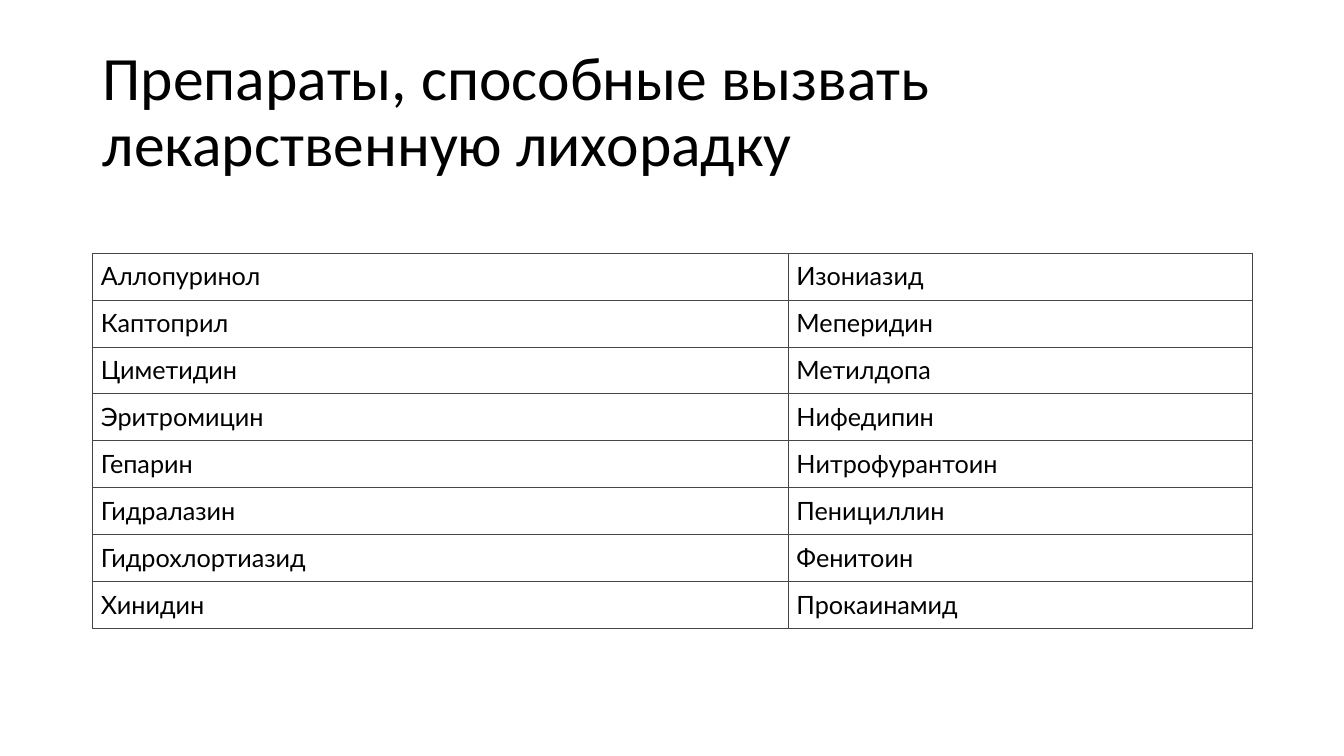
from dataclasses import dataclass

from lxml.etree import SubElement as Sub
from pptx import Presentation
from pptx.dml.color import RGBColor as Rgb
from pptx.enum.text import MSO_ANCHOR as Anchor
from pptx.oxml.ns import qn
from pptx.slide import Slide
from pptx.table import _Cell as Cell
from pptx.text.text import _Paragraph as Para
from pptx.util import Inches, Pt


@dataclass(frozen=True)
class Theme:
    ink: str = "000000"
    paper: str = "FFFFFF"
    rule: str = "464646"
    rule_size: float = 0.75
    head_font: str = "Calibri"
    head_size: int = 44
    body_font: str = "Lato"
    body_size: int = 18


@dataclass(frozen=True)
class Box:
    left: float
    top: float
    width: float
    height: float


@dataclass(frozen=True)
class Pair:
    left: str
    right: str


THEME = Theme()
TITLE = "Препараты, способные вызвать лекарственную лихорадку"
TITLE_BOX = Box(0.92, 0.4, 11.5, 1.45)
TABLE_BOX = Box(0.92, 2.51, 11.5, 3.73)
SHARES = (0.6, 0.4)
INSET = 0.08
DRUGS = (
    Pair("Аллопуринол", "Изониазид"),
    Pair("Каптоприл", "Меперидин"),
    Pair("Циметидин", "Метилдопа"),
    Pair("Эритромицин", "Нифедипин"),
    Pair("Гепарин", "Нитрофурантоин"),
    Pair("Гидралазин", "Пенициллин"),
    Pair("Гидрохлортиазид", "Фенитоин"),
    Pair("Хинидин", "Прокаинамид"),
)


def place(box: Box) -> tuple[int, ...]:
    """Turn a box into left, top, width and height as lengths."""
    return tuple(Inches(n) for n in (box.left, box.top, box.width, box.height))


def add_run(para: Para, text: str, font: str, size: int) -> None:
    run = para.add_run()
    run.text = text
    run.font.name = font
    run.font.size = Pt(size)
    run.font.color.rgb = Rgb.from_string(THEME.ink)


def add_title(slide: Slide) -> None:
    frame = slide.shapes.add_textbox(*place(TITLE_BOX)).text_frame
    frame.word_wrap = True
    frame.vertical_anchor = Anchor.MIDDLE
    para = frame.paragraphs[0]
    para.line_spacing = 0.9
    add_run(para, TITLE, THEME.head_font, THEME.head_size)


def add_rules(cell: Cell) -> None:
    """Draw a thin line on all four sides of a cell."""
    props = cell._tc.get_or_add_tcPr()
    for side in ("lnL", "lnR", "lnT", "lnB"):
        line = Sub(props, qn(f"a:{side}"), w=str(Pt(THEME.rule_size)))
        fill = Sub(line, qn("a:solidFill"))
        Sub(fill, qn("a:srgbClr"), val=THEME.rule)


def fill_cell(cell: Cell, text: str) -> None:
    cell.margin_left = cell.margin_right = Inches(INSET)
    cell.margin_top = cell.margin_bottom = Inches(INSET)
    add_rules(cell)
    cell.fill.solid()
    cell.fill.fore_color.rgb = Rgb.from_string(THEME.paper)
    para = cell.text_frame.paragraphs[0]
    add_run(para, text, THEME.body_font, THEME.body_size)


def add_drugs(slide: Slide) -> None:
    shape = slide.shapes.add_table(len(DRUGS), len(SHARES), *place(TABLE_BOX))
    table = shape.table
    table.first_row = table.horz_banding = False
    for col, share in zip(table.columns, SHARES):
        col.width = Inches(TABLE_BOX.width * share)
    for row, pair in zip(table.rows, DRUGS):
        for cell, text in zip(row.cells, (pair.left, pair.right)):
            fill_cell(cell, text)


def main() -> None:
    deck = Presentation()
    deck.slide_width = Inches(13.33)
    deck.slide_height = Inches(7.5)
    slide = deck.slides.add_slide(deck.slide_layouts[6])
    add_title(slide)
    add_drugs(slide)
    deck.save("out.pptx")


if __name__ == "__main__":
    main()
